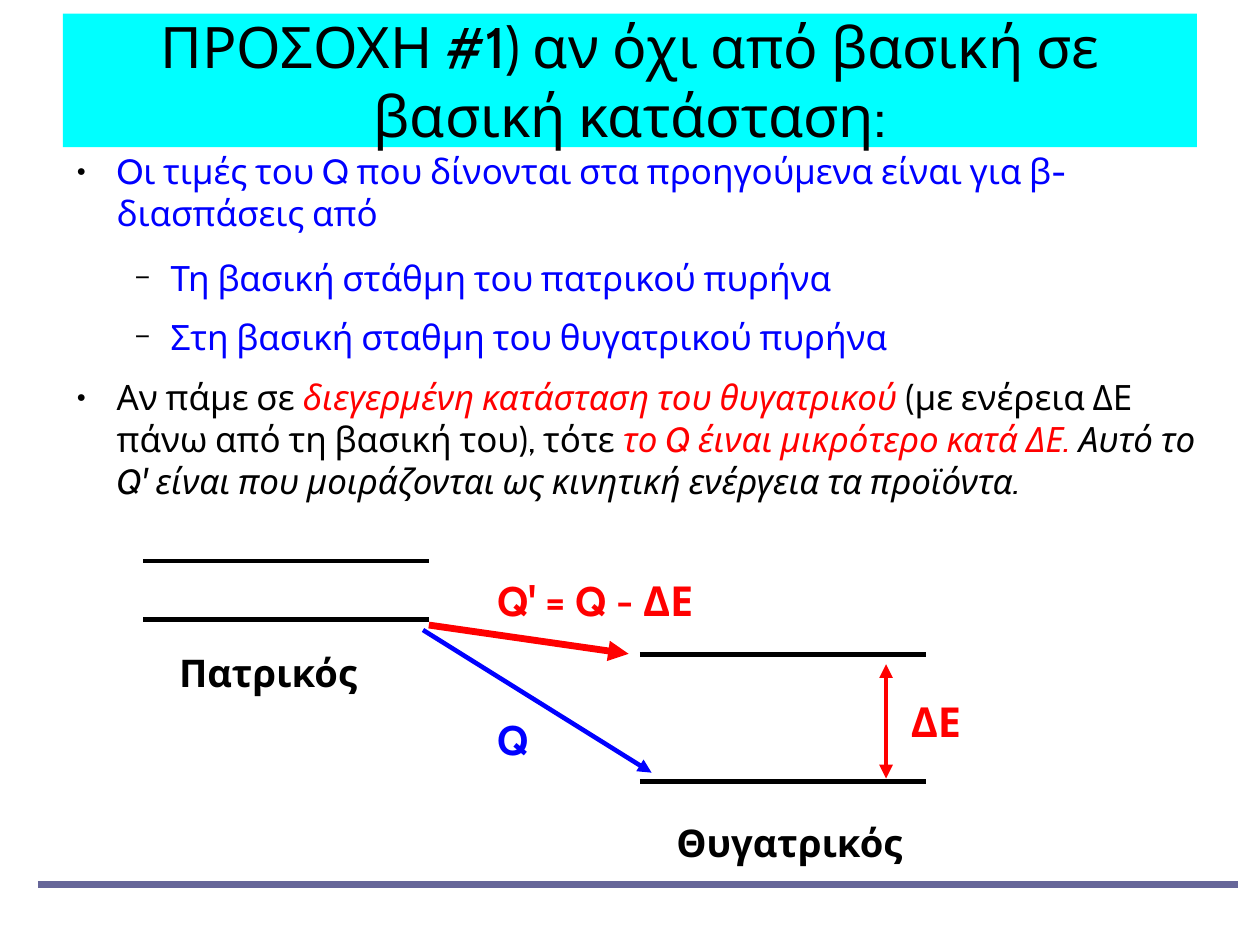
import pptx
import pptx.dml.color
import pptx.enum.shapes
import pptx.enum.text
import pptx.oxml.ns
import pptx.util
import lxml.etree

Cm = pptx.util.Cm
Pt = pptx.util.Pt
qn = pptx.oxml.ns.qn

COLORS = {
    "black": "000000",
    "red": "FF0000",
    "blue": "0000FF",
    "cyan": "00FFFF",
    "rule": "666699",
}
# Bullet sign, size in percent, left margin, hanging indent, space after
BULLETS = [
    ("●", 45, 1.19, -0.89, 14.2),
    ("−", 75, 2.39, -0.79, 11.3),
]


def rgb(name):
    return pptx.dml.color.RGBColor.from_string(COLORS[name])


class SlideWriter:
    """Holds the text style and the current slide."""

    def __init__(self, slide, font="Cabin"):
        self.slide = slide
        self.font = font

    def format_run(self, run, size, color, bold=False, italic=False):
        font = run.font
        font.name, font.size = self.font, Pt(size)
        font.bold, font.italic = bold, italic
        font.color.rgb = rgb(color)

    def place(self, shape, left, top, width, height, margins=None):
        shape.left, shape.top = Cm(left), Cm(top)
        shape.width, shape.height = Cm(width), Cm(height)
        frame = shape.text_frame
        frame.word_wrap = True
        frame.auto_size = pptx.enum.text.MSO_AUTO_SIZE.NONE
        if margins is not None:
            frame.margin_left = frame.margin_right = Cm(margins)
            frame.margin_top = frame.margin_bottom = Cm(margins)
        return frame

    def title(self, text, *area):
        shape = self.slide.shapes.title
        frame = self.place(shape, *area, margins=0)
        shape.fill.solid()
        shape.fill.fore_color.rgb = rgb("cyan")
        frame.vertical_anchor = pptx.enum.text.MSO_ANCHOR.MIDDLE
        frame.text = text
        para = frame.paragraphs[0]
        para.alignment = pptx.enum.text.PP_ALIGN.CENTER
        self.format_run(para.runs[0], 36, "black")

    def bullet_list(self, items, *area):
        frame = self.place(self.slide.placeholders[1], *area, margins=0)
        frame.vertical_anchor = pptx.enum.text.MSO_ANCHOR.TOP
        for index, (level, spans) in enumerate(items):
            para = frame.add_paragraph() if index else frame.paragraphs[0]
            self.set_bullet(para, level)
            for text, color, italic in spans:
                run = para.add_run()
                run.text = text
                self.format_run(run, 22, color, italic=italic)

    def set_bullet(self, para, level):
        sign, percent, margin, indent, after = BULLETS[level]
        para.level = level
        para.space_before, para.space_after = Pt(0), Pt(after)
        props = para._p.get_or_add_pPr()
        props.set("marL", str(Cm(margin)))
        props.set("indent", str(Cm(indent)))
        color = lxml.etree.SubElement(props, qn("a:buClr"))
        lxml.etree.SubElement(color, qn("a:srgbClr"), val=COLORS["black"])
        lxml.etree.SubElement(props, qn("a:buSzPct"), val=str(percent * 1000))
        lxml.etree.SubElement(props, qn("a:buChar"), char=sign)

    def label(self, text, size, color, *area):
        box = self.slide.shapes.add_textbox(0, 0, 0, 0)
        frame = self.place(box, *area)
        frame.text = text
        self.format_run(frame.paragraphs[0].runs[0], size, color, bold=True)

    def line(self, x1, y1, x2, y2, color="black", width=2.89, arrows=()):
        line = self.slide.shapes.add_connector(
            pptx.enum.shapes.MSO_CONNECTOR.STRAIGHT,
            Cm(x1), Cm(y1), Cm(x2), Cm(y2))
        line.line.color.rgb = rgb(color)
        line.line.width = Pt(width)
        outline = line.line._get_or_add_ln()
        for end in arrows:
            lxml.etree.SubElement(outline, qn("a:" + end), type="triangle")
        lxml.etree.SubElement(line._element.spPr, qn("a:effectLst"))


def main():
    deck = pptx.Presentation()
    deck.slide_width, deck.slide_height = Cm(28), Cm(21)
    page = SlideWriter(deck.slides.add_slide(deck.slide_layouts[1]))

    # Footer rule, title and list
    page.line(0.84, 19.66, 27.51, 19.66, "rule", 4.31)
    page.title("ΠΡΟΣΟΧΗ #1) αν όχι από βασική σε βασική κατάσταση:",
               1.4, 0.3, 25.2, 2.97)
    page.bullet_list([
        (0, [("Oι τιμές του Q που δίνονται στα προηγούμενα είναι για "
              "β-διασπάσεις από", "blue", False)]),
        (1, [("Τη βασική στάθμη του πατρικού πυρήνα", "blue", False)]),
        (1, [("Στη βασική σταθμη του θυγατρικού πυρήνα", "blue", False)]),
        (0, [("Αν πάμε σε ", "black", False),
             ("διεγερμένη κατάσταση του θυγατρικού", "red", True),
             (" (με ενέρεια ΔΕ πάνω από τη βασική του), τότε ",
              "black", False),
             ("το Q έιναι μικρότερο κατά ΔΕ. ", "red", True),
             ("Αυτό το Q' είναι που μοιράζονται ως κινητική ενέργεια "
              "τα προϊόντα.", "black", True)]),
    ], 1.4, 3.33, 25.2, 16.54)

    # Energy levels: parent on the left, daughter on the right
    level_width = 6.35
    for left, heights in ((3.18, (12.47, 13.77)), (14.22, (14.55, 17.37))):
        for y in heights:
            page.line(left, y, left + level_width, y)

    # Transitions and energy difference
    page.line(9.4, 14, 14.48, 17.17, "blue", arrows=["tailEnd"])
    page.line(9.53, 13.89, 13.97, 14.53, "red", 4.31, ["tailEnd"])
    page.line(19.69, 14.76, 19.69, 17.3, "red",
              arrows=["headEnd", "tailEnd"])

    # Labels
    page.label("Πατρικός", 24, "black", 3.73, 14.3, 4.95, 1.24)
    page.label("Θυγατρικός", 24, "black", 14.78, 18.08, 6.12, 1.24)
    page.label("Q' = Q - ΔΕ", 26, "red", 10.8, 12.65, 6.12, 1.32)
    page.label("Q", 26, "blue", 10.8, 15.75, 1.27, 1.32)
    page.label("ΔΕ", 26, "red", 19.99, 15.34, 1.83, 1.32)

    deck.save("out.pptx")


if __name__ == "__main__":
    main()
